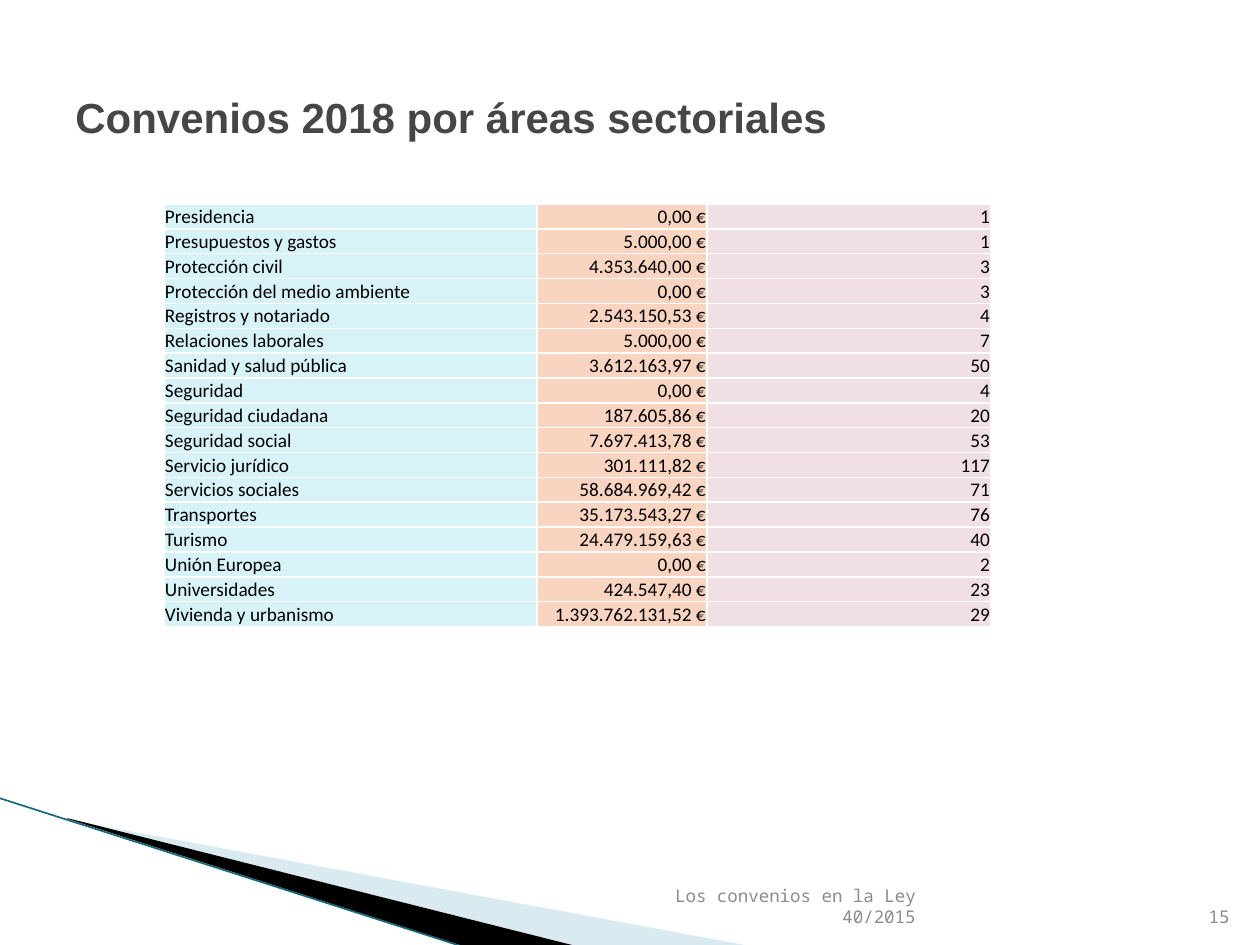
from lxml.etree import SubElement
from pptx import Presentation
from pptx.dml.color import RGBColor
from pptx.enum.shapes import MSO_CONNECTOR
from pptx.enum.text import MSO_ANCHOR, PP_ALIGN
from pptx.oxml.ns import qn
from pptx.util import Pt

PX = 914400 // 126  # EMU in one px
WIDE, HIGH = 1260, 945

COLORS = {
    "title": "464646", "text": "000000", "foot": "8C8C8C",
    "area": "78D6EA", "amount": "F7C1A4", "count": "EAD3D8",
    "pale": "A0CBDC", "dark": "000000", "edge": "16697A",
}

# Table columns: width, fill, opacity in percent, alignment
COLS = [
    (373, "area", 29, PP_ALIGN.LEFT),
    (170, "amount", 69, PP_ALIGN.RIGHT),
    (284, "count", 70, PP_ALIGN.RIGHT),
]

ROWS = [
    ("Presidencia", "0,00 €", "1"),
    ("Presupuestos y gastos", "5.000,00 €", "1"),
    ("Protección civil", "4.353.640,00 €", "3"),
    ("Protección del medio ambiente", "0,00 €", "3"),
    ("Registros y notariado", "2.543.150,53 €", "4"),
    ("Relaciones laborales", "5.000,00 €", "7"),
    ("Sanidad y salud pública", "3.612.163,97 €", "50"),
    ("Seguridad", "0,00 €", "4"),
    ("Seguridad ciudadana", "187.605,86 €", "20"),
    ("Seguridad social", "7.697.413,78 €", "53"),
    ("Servicio jurídico", "301.111,82 €", "117"),
    ("Servicios sociales", "58.684.969,42 €", "71"),
    ("Transportes", "35.173.543,27 €", "76"),
    ("Turismo", "24.479.159,63 €", "40"),
    ("Unión Europea", "0,00 €", "2"),
    ("Universidades", "424.547,40 €", "23"),
    ("Vivienda y urbanismo", "1.393.762.131,52 €", "29"),
]


def color(name):
    return RGBColor.from_string(COLORS[name])


def paint(fill, name, alpha=100):
    """Solid fill with an opacity in percent."""
    fill.solid()
    fill.fore_color.rgb = color(name)
    if alpha < 100:
        tint = fill._xPr.find(qn("a:solidFill"))[0]
        SubElement(tint, qn("a:alpha"), val=str(alpha * 1000))


def write(frame, text, size, face, name, align=PP_ALIGN.LEFT, bold=False):
    para = frame.paragraphs[0]
    para.alignment = align
    run = para.add_run()
    run.text = text
    font = run.font
    font.size, font.name, font.bold = Pt(size), face, bold
    font.color.rgb = color(name)


def label(slide, box, anchor, *style, **more):
    frame = slide.shapes.add_textbox(*(n * PX for n in box)).text_frame
    frame.word_wrap = True
    frame.vertical_anchor = anchor
    write(frame, *style, **more)


def wedge(slide, left, top, points, name, alpha=100):
    spots = [(left + x, top + y) for x, y in points]
    build = slide.shapes.build_freeform(*spots[0], scale=PX)
    build.add_line_segments(spots[1:], close=True)
    shape = build.convert_to_shape()
    shape.shadow.inherit = False
    shape.line.fill.background()
    paint(shape.fill, name, alpha)


def swoosh(slide, left, top, width, height):
    """Corner wedges with a thin edge line."""
    wedge(slide, left, top, [(70, 22), (751, 148), (576, 148), (70, 21)], "pale", 40)
    wedge(slide, left, top, [(68, 20), (577, 148), (470, 150), (69, 21)], "dark")
    line = slide.shapes.add_connector(
        MSO_CONNECTOR.STRAIGHT, left * PX, top * PX,
        (left + width) * PX, (top + height) * PX)
    line.line.color.rgb = color("edge")
    line.line.width = Pt(0.95)
    SubElement(line._element.spPr, qn("a:effectLst"))


def grid(slide, left, top, width, height):
    """Sector table, with rows of equal height."""
    table = slide.shapes.add_table(
        len(ROWS), len(COLS), left * PX, top * PX, width * PX, height * PX).table
    table.first_row = table.horz_banding = False
    for col, (wide, *_) in zip(table.columns, COLS):
        col.width = wide * PX
    for r, row in enumerate(ROWS):
        table.rows[r].height = height * PX // len(ROWS)
        for c, (_, fill, alpha, align) in enumerate(COLS):
            cell = table.cell(r, c)
            cell.margin_left = cell.margin_right = cell.margin_top = PX
            cell.margin_bottom = 0
            cell.vertical_anchor = MSO_ANCHOR.BOTTOM
            paint(cell.fill, fill, alpha)
            write(cell.text_frame, row[c], 11, "Calibri", "text", align)


def footer(slide, left, top, width, height):
    """Footer text and, at the right end, the page number."""
    style = 10, "Noto Sans Mono", "foot", PP_ALIGN.RIGHT
    label(slide, (left, top, 324, height), MSO_ANCHOR.BOTTOM,
          "Los convenios en la Ley 40/2015", *style)
    label(slide, (left + width - 50, top, 50, height), MSO_ANCHOR.BOTTOM,
          "15", *style)


def main():
    deck = Presentation()
    deck.slide_width, deck.slide_height = WIDE * PX, HIGH * PX
    slide = deck.slides.add_slide(deck.slide_layouts[6])
    swoosh(slide, -1, 798, 468, 150)
    grid(slide, 164, 204, 827, 423)
    footer(slide, 604, 883, 638, 50)
    label(slide, (63, 38, 1134, 158), MSO_ANCHOR.MIDDLE,
          "Convenios 2018 por áreas sectoriales", 24, "Arial", "title", bold=True)
    deck.save("out.pptx")


if __name__ == "__main__":
    main()
